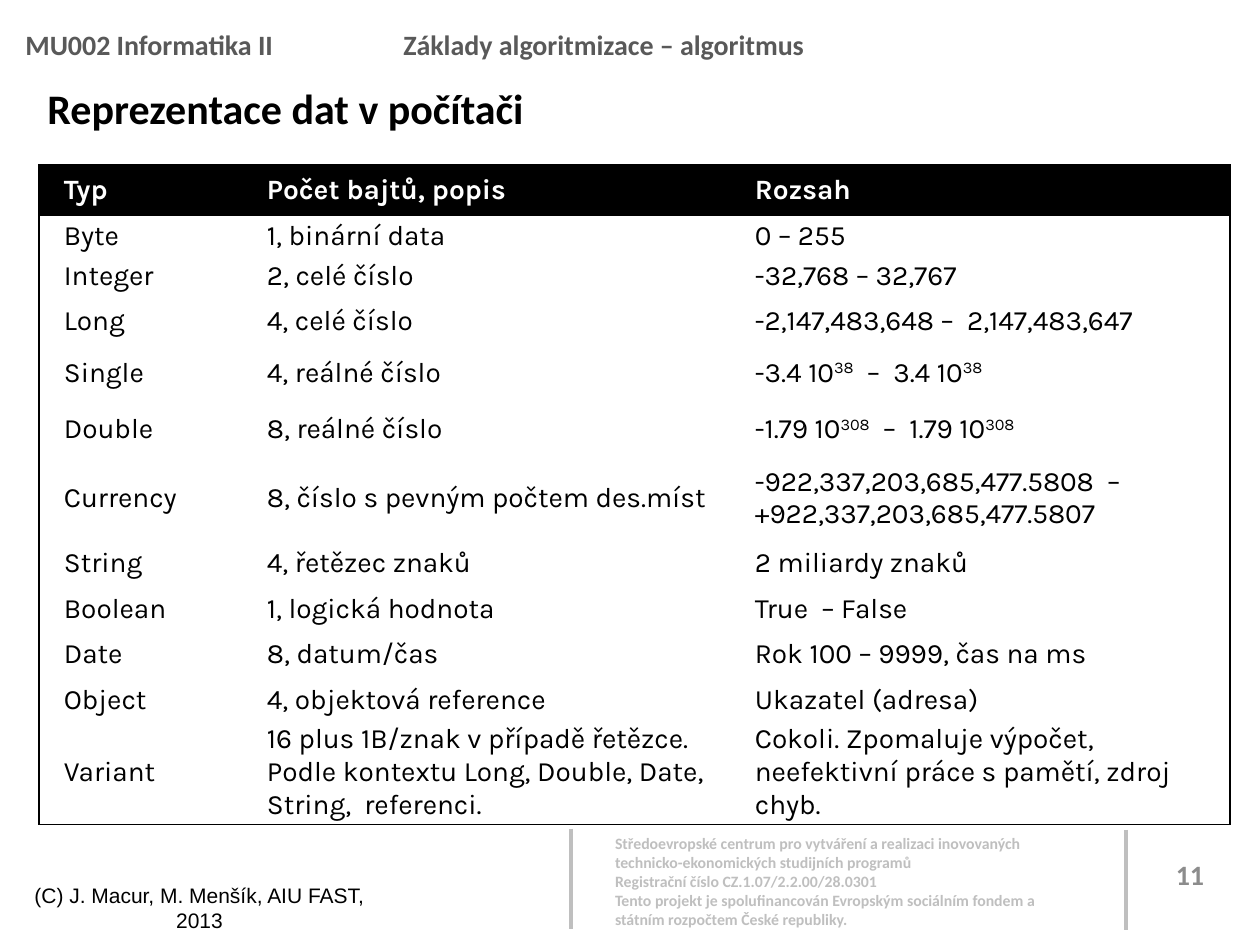
from lxml import etree
from pptx import Presentation, util as u
from pptx.dml.color import RGBColor
from pptx.enum import shapes, text
from pptx.oxml.ns import qn

PX = 914400 / 126
COLORS = {"black": "000000", "white": "FFFFFF", "header": "595959",
          "number": "8C8C8C", "footer": "BFBFBF"}
COLUMNS = [203, 488, 500]
HEIGHTS = [51, 40, 40, 50, 54, 59, 79, 51, 40, 51, 40, 105]
ROWS = [
    ("Typ", "Počet bajtů, popis", "Rozsah"),
    ("Byte", "1, binární data", "0 – 255"),
    ("Integer", "2, celé číslo", "-32,768 – 32,767"),
    ("Long", "4, celé číslo", "-2,147,483,648 –  2,147,483,647"),
    ("Single", "4, reálné číslo", "-3.4 10^38^  –  3.4 10^38^"),
    ("Double", "8, reálné číslo", "-1.79 10^308^  –  1.79 10^308^"),
    ("Currency", "8, číslo s pevným počtem des.míst",
     "-922,337,203,685,477.5808  – +922,337,203,685,477.5807"),
    ("String", "4, řetězec znaků", "2 miliardy znaků"),
    ("Boolean", "1, logická hodnota", "True  – False"),
    ("Date", "8, datum/čas", "Rok 100 – 9999, čas na ms"),
    ("Object", "4, objektová reference", "Ukazatel (adresa)"),
    ("Variant", "16 plus 1B/znak v případě řetězce. Podle kontextu Long, Double, Date, String,  referenci.",
     "Cokoli. Zpomaluje výpočet, neefektivní práce s pamětí, zdroj chyb."),
]
FOOTER = [
    "Středoevropské centrum pro vytváření a realizaci inovovaných technicko-ekonomických studijních programů",
    "Registrační číslo CZ.1.07/2.2.00/28.0301",
    "Tento projekt je spolufinancován Evropským sociálním fondem a státním rozpočtem České republiky.",
]


def px(length):
    return u.Emu(round(length * PX))


def rgb(name):
    return RGBColor.from_string(COLORS[name])


def write(frame, lines, size=16, font="Calibri", color="black", bold=True,
          align=None, spacing=None, tab=None):
    for index, line in enumerate(lines):
        para = frame.add_paragraph() if index else frame.paragraphs[0]
        if tab:
            stops = etree.SubElement(para._p.get_or_add_pPr(), qn("a:tabLst"))
            etree.SubElement(stops, qn("a:tab"), pos=str(px(tab)), algn="l")
        para.alignment = align
        para.line_spacing = spacing
        for part, words in enumerate(line.split("^")):
            if not words:
                continue
            span = para.add_run()
            span.text = words
            span.font.size = u.Pt(size)
            span.font.name = font
            span.font.bold = bold
            span.font.color.rgb = rgb(color)
            if part % 2:
                span._r.get_or_add_rPr().set("baseline", "30000")


def add_text(page, place, lines, inset=None, anchor=text.MSO_ANCHOR.TOP, **style):
    frame = page.shapes.add_textbox(*map(px, place)).text_frame
    frame.word_wrap = True
    frame.vertical_anchor = anchor
    if inset:
        frame.margin_left = frame.margin_right = px(inset)
        frame.margin_top = frame.margin_bottom = px(inset)
    write(frame, lines, **style)


def add_divider(page, x, top, bottom):
    line = page.shapes.add_connector(shapes.MSO_CONNECTOR.STRAIGHT,
                                     px(x), px(top), px(x), px(bottom))
    line.line.color.rgb = rgb("footer")
    line.line.width = u.Pt(2)
    etree.SubElement(line._element.spPr, qn("a:effectLst"))


def set_borders(cell, edges):
    properties = cell._tc.get_or_add_tcPr()
    for index, (side, visible) in enumerate(edges.items()):
        border = etree.Element(qn(f"a:ln{side}"), w=str(u.Pt(0.75)))
        if visible:
            fill = etree.SubElement(border, qn("a:solidFill"))
            etree.SubElement(fill, qn("a:srgbClr"), val=COLORS["black"])
        else:
            etree.SubElement(border, qn("a:noFill"))
        properties.insert(index, border)


def add_types_table(page):
    table = page.shapes.add_table(len(ROWS), len(COLUMNS), px(39), px(165),
                                  px(sum(COLUMNS)), px(sum(HEIGHTS))).table
    table.horz_banding = False
    for column, width in zip(table.columns, COLUMNS):
        column.width = px(width)
    for r, (row, height) in enumerate(zip(ROWS, HEIGHTS)):
        table.rows[r].height = px(height)
        for c, words in enumerate(row):
            cell = table.cell(r, c)
            cell.vertical_anchor = text.MSO_ANCHOR.MIDDLE
            cell.margin_left = px(25)
            cell.margin_right = cell.margin_top = cell.margin_bottom = px(1)
            cell.fill.solid()
            cell.fill.fore_color.rgb = rgb("white" if r else "black")
            set_borders(cell, {"L": c == 0, "R": c == len(COLUMNS) - 1,
                               "T": r == 0, "B": r == len(ROWS) - 1})
            write(cell.text_frame, [words], font="Karla", bold=r == 0,
                  color="black" if r else "white")


def main():
    deck = Presentation()
    deck.slide_width, deck.slide_height = px(1260), px(945)
    page = deck.slides.add_slide(deck.slide_layouts[6])
    middle, center = text.MSO_ANCHOR.MIDDLE, text.PP_ALIGN.CENTER
    add_text(page, (610, 829, 446, 106), FOOTER, inset=5, size=9, color="footer")
    add_text(page, (1147, 849, 86, 50), ["11"], anchor=middle, align=center, color="number")
    add_divider(page, 571, 829, 929)
    add_divider(page, 1126, 830, 930)
    add_text(page, (0, 890, 399, 36), ["(C) J. Macur, M. Menšík, AIU FAST, 2013"],
             anchor=middle, align=center, size=12, font="Arial", bold=False)
    add_types_table(page)
    add_text(page, (35, 76, 1160, 63), ["Reprezentace dat v počítači"], anchor=middle, size=24)
    add_text(page, (13, 5, 1203, 63), ["MU002 Informatika II\tZáklady algoritmizace – algoritmus"],
             color="header", spacing=1.5, tab=378)
    deck.save("out.pptx")


if __name__ == "__main__":
    main()
